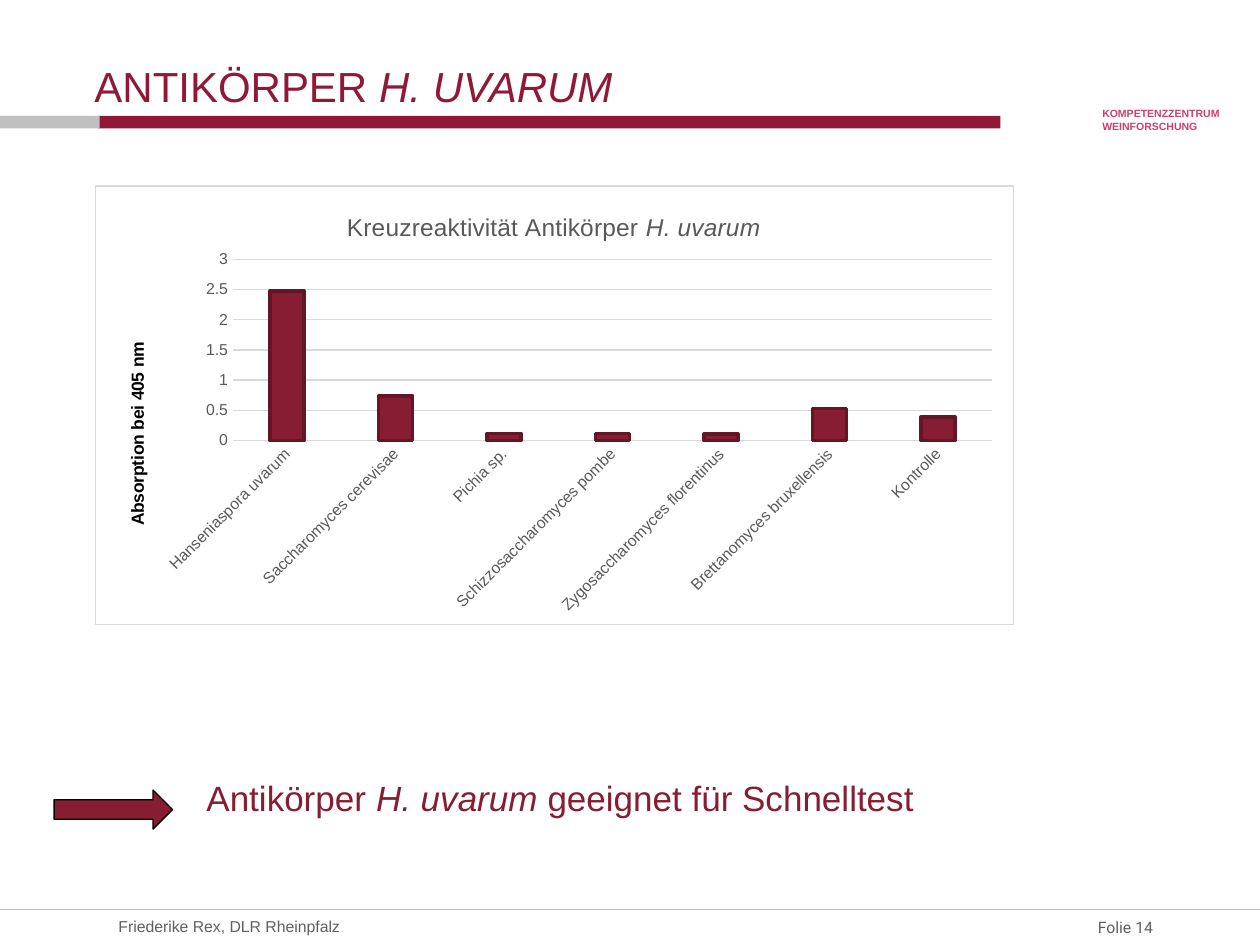
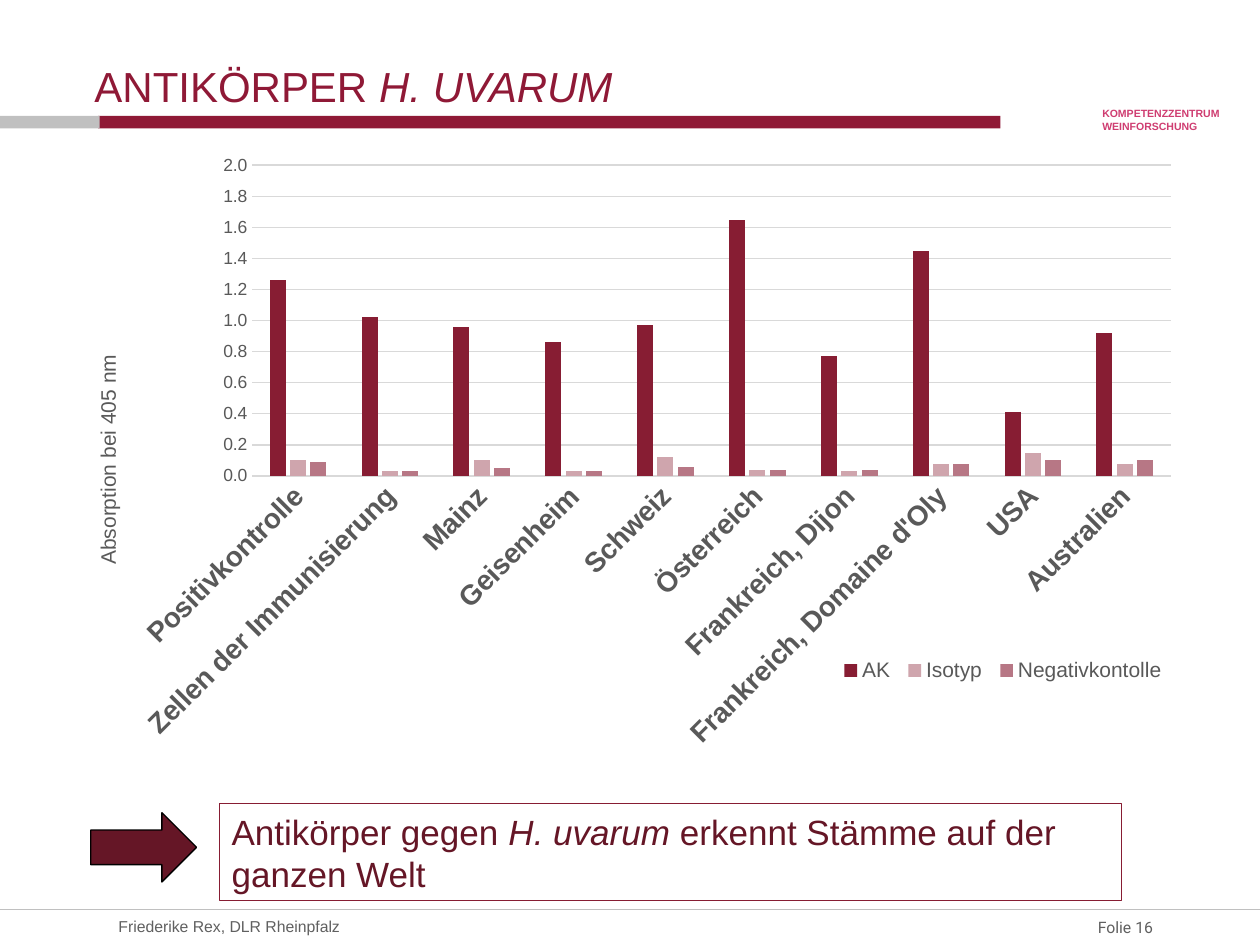
from pptx import Presentation
from pptx.chart.data import CategoryChartData
from pptx.dml.color import RGBColor
from pptx.enum.chart import XL_CHART_TYPE, XL_LEGEND_POSITION, XL_TICK_MARK
from pptx.enum.shapes import MSO_CONNECTOR, MSO_SHAPE
from pptx.enum.text import MSO_ANCHOR, PP_ALIGN
from pptx.oxml import parse_xml
from pptx.oxml.ns import nsdecls, qn
from pptx.util import Inches, Pt

COLUMN = XL_CHART_TYPE.COLUMN_CLUSTERED
BOTTOM = XL_LEGEND_POSITION.BOTTOM
NO_TICK = XL_TICK_MARK.NONE
RECT, ARROW = MSO_SHAPE.RECTANGLE, MSO_SHAPE.RIGHT_ARROW
TOP, MIDDLE, LOW = MSO_ANCHOR.TOP, MSO_ANCHOR.MIDDLE, MSO_ANCHOR.BOTTOM
LEFT, RIGHT = PP_ALIGN.LEFT, PP_ALIGN.RIGHT

BAND = RGBColor(0x8F, 0x19, 0x36)
WINE = RGBColor(0x87, 0x1D, 0x33)
DARK = RGBColor(0x65, 0x16, 0x26)
ROSE = RGBColor(0xCF, 0xA5, 0xAD)
MAUVE = RGBColor(0xB7, 0x77, 0x85)
PINK = RGBColor(0xCF, 0x3D, 0x71)
SILVER = RGBColor(0xC0, 0xC0, 0xC0)
PALE = RGBColor(0xD9, 0xD9, 0xD9)
GREY = RGBColor(0x59, 0x59, 0x59)
FOOT = RGBColor(0x60, 0x60, 0x60)
BLACK = RGBColor(0, 0, 0)
FONT = "Arial"

TITLE = [("ANTIKÖRPER ", False), ("H. UVARUM", True)]
AUTHOR = "Friederike Rex, DLR Rheinpfalz"
CENTRE = "KOMPETENZZENTRUM WEINFORSCHUNG"
AXIS = "Absorption bei 405 nm"

CROSS = {
    "at": (0.75, 1.47, 7.3, 3.49),
    "title": [("Kreuzreaktivität Antikörper ", False), ("H. uvarum", True)],
    "title_at": (0.27, 0.05),
    "cats": ["Hanseniaspora uvarum", "Saccharomyces cerevisae", "Pichia sp.",
             "Schizzosaccharomyces pombe", "Zygosaccharomyces florentinus",
             "Brettanomyces bruxellensis", "Kontrolle"],
    "series": [("Series 1", WINE, [2.48, 0.74, 0.12, 0.12, 0.11, 0.53, 0.39])],
    "top": 3, "step": 0.5, "format": "General",
    "cat_font": (9, GREY, False), "val_font": (9, GREY, False),
    "axis_font": (10, BLACK, True), "axis_at": (0.03, 0.35),
    "plot": (0.15, 0.168, 0.827, 0.413),
    "edge": DARK, "frame": True, "legend": None,
}
STRAINS = {
    "at": (0.5, 1.13, 8.99, 5.34),
    "title": None,
    "cats": ["Positivkontrolle", "Zellen der Immunisierung", "Mainz", "Geisenheim",
             "Schweiz", "Österreich", "Frankreich, Dijon",
             "Frankreich, Domaine d'Oly", "USA", "Australien"],
    "series": [
        ("AK", WINE, [1.26, 1.02, 0.96, 0.86, 0.97, 1.65, 0.77, 1.45, 0.41, 0.92]),
        ("Isotyp", ROSE, [0.1, 0.03, 0.1, 0.03, 0.12, 0.04, 0.03, 0.08, 0.15, 0.08]),
        ("Negativkontolle", MAUVE,
         [0.09, 0.03, 0.05, 0.03, 0.06, 0.04, 0.04, 0.08, 0.1, 0.1]),
    ],
    "top": 2, "step": 0.2, "format": "0.0",
    "cat_font": (16, GREY, True), "val_font": (10, GREY, False),
    "axis_font": (12, GREY, False), "axis_at": (0.025, 0.31),
    "plot": (0.167, 0.034, 0.811, 0.462),
    "edge": None, "frame": False, "legend": (0.68, 0.76, 0.3, 0.05),
}
SLIDES = [
    {"number": 14, "chart": CROSS, "tint": WINE, "box": (1.54, 6.11, 8.23, 0.44),
     "arrow": (0.43, 6.27, 0.94, 0.31), "framed": False,
     "claim": [("Antikörper ", False), ("H. uvarum ", True),
               ("geeignet für Schnelltest", False)]},
    {"number": 16, "chart": STRAINS, "tint": DARK, "box": (1.74, 6.38, 7.16, 0.77),
     "arrow": (0.72, 6.45, 0.84, 0.55), "framed": True,
     "claim": [("Antikörper gegen ", False), ("H. uvarum ", True),
               ("erkennt Stämme auf der ganzen Welt", False)]},
]


def style(font, size, color, bold=False, name=FONT):
    font.name, font.size, font.bold = name, Pt(size), bold
    font.color.rgb = color


def write(para, runs, size, color, bold=False, name=FONT):
    for text, slant in runs:
        run = para.add_run()
        run.text = text
        style(run.font, size, color, bold, name)
        run.font.italic = slant


def label(slide, at, runs, size, color, bold=False, name=FONT,
          anchor=TOP, align=LEFT, inset=True):
    box = slide.shapes.add_textbox(*map(Inches, at))
    frame = box.text_frame
    frame.word_wrap = True
    frame.vertical_anchor = anchor
    if not inset:
        frame.margin_left = frame.margin_right = 0
        frame.margin_top = frame.margin_bottom = 0
    frame.paragraphs[0].alignment = align
    write(frame.paragraphs[0], runs, size, color, bold, name)
    return box


def block(slide, kind, at, fill, line=None):
    shape = slide.shapes.add_shape(kind, *map(Inches, at))
    shape.shadow.inherit = False
    shape.fill.solid()
    shape.fill.fore_color.rgb = fill
    if line is None:
        shape.line.fill.background()
    else:
        shape.line.color.rgb = line
        shape.line.width = Pt(0.75)


def place(node, index, spot, inner=False):
    old = node.find(qn("c:layout"))
    if old is not None:
        node.remove(old)
    target = '<c:layoutTarget val="inner"/>' if inner else ""
    modes = "".join(f'<c:{key}Mode val="edge"/>' for key in "xy")
    sizes = "".join(f'<c:{key} val="{val}"/>' for key, val in zip("xywh", spot))
    node.insert(index, parse_xml(
        f'<c:layout {nsdecls("c")}><c:manualLayout>{target}{modes}{sizes}'
        '</c:manualLayout></c:layout>'))


def border(chart, shown):
    fill = ('<a:solidFill><a:srgbClr val="{}"/></a:solidFill>'.format
            if shown else lambda color: "<a:noFill/>")
    chart.element.find(qn("c:chart")).addnext(parse_xml(
        f'<c:spPr {nsdecls("c", "a")}>{fill("FFFFFF")}'
        f'<a:ln w="9525">{fill(PALE)}</a:ln></c:spPr>'))


def columns(slide, info):
    data = CategoryChartData()
    data.categories = info["cats"]
    for name, color, vals in info["series"]:
        data.add_series(name, vals)
    chart = slide.shapes.add_chart(COLUMN, *map(Inches, info["at"]), data).chart
    style(chart.font, 10, BLACK)
    border(chart, info["frame"])

    plot = chart.plots[0]
    plot.gap_width, plot.overlap = 219, -27
    plot.vary_by_categories = False
    for series, (name, color, vals) in zip(plot.series, info["series"]):
        series.invert_if_negative = False
        series.format.fill.solid()
        series.format.fill.fore_color.rgb = color
        if info["edge"] is not None:
            series.format.line.color.rgb = info["edge"]
            series.format.line.width = Pt(2)

    cat, val = chart.category_axis, chart.value_axis
    for axis, key in ((cat, "cat_font"), (val, "val_font")):
        axis.major_tick_mark = axis.minor_tick_mark = NO_TICK
        style(axis.tick_labels.font, *info[key])
    val.minimum_scale, val.maximum_scale = 0, info["top"]
    val.major_unit = info["step"]
    val.tick_labels.number_format = info["format"]
    val.tick_labels.number_format_is_linked = False
    val.format.line.fill.background()
    for line in (cat.format.line, val.major_gridlines.format.line):
        line.color.rgb = PALE
        line.width = Pt(0.75)
    write(val.axis_title.text_frame.paragraphs[0], [(AXIS, False)], *info["axis_font"])

    area = chart.element.find(".//" + qn("c:plotArea"))
    turn = area.find(f"{qn('c:catAx')}/{qn('c:txPr')}/{qn('a:bodyPr')}")
    turn.set("rot", "-2700000")
    turn.set("vert", "horz")
    name = area.find(f"{qn('c:valAx')}/{qn('c:title')}")
    body = name.find(".//" + qn("a:bodyPr"))
    body.set("rot", "-5400000")
    body.set("vert", "horz")
    place(name, 1, info["axis_at"])
    place(area, 0, info["plot"], True)

    chart.has_title = info["title"] is not None
    if chart.has_title:
        write(chart.chart_title.text_frame.paragraphs[0], info["title"], 14, GREY)
        place(chart.element.find(f"{qn('c:chart')}/{qn('c:title')}"), 1, info["title_at"])
    chart.has_legend = info["legend"] is not None
    if chart.has_legend:
        chart.legend.position = BOTTOM
        chart.legend.include_in_layout = False
        style(chart.legend.font, 12, GREY)
        place(chart.element.find(".//" + qn("c:legend")), 1, info["legend"])


def base(slide, number):
    block(slide, RECT, (0.78, 0.92, 7.16, 0.1), BAND)
    block(slide, RECT, (0, 0.92, 0.79, 0.1), SILVER)
    label(slide, (0.94, 7.22, 6.56, 0.26), [(AUTHOR, False)], 9, FOOT,
          anchor=MIDDLE, inset=False)
    label(slide, (7.94, 7.22, 1.21, 0.28), [(f"Folie {number}", False)], 9, FOOT,
          name="Roboto", anchor=MIDDLE, align=RIGHT, inset=False)
    rule = slide.shapes.add_connector(
        MSO_CONNECTOR.STRAIGHT, 0, Inches(7.22), Inches(10), Inches(7.22))
    rule.line.color.rgb = SILVER
    rule.line.width = Pt(0.75)
    rule.element.spPr.append(parse_xml(f'<a:effectLst {nsdecls("a")}/>'))
    label(slide, (8.65, 0.8, 1.33, 0.3), [(CENTRE, False)], 6, PINK, True)
    label(slide, (0.75, 0.15, 7.44, 0.73), TITLE, 24, BAND, anchor=LOW, inset=False)


def main():
    deck = Presentation()
    deck.slide_width, deck.slide_height = Inches(10), Inches(7.5)
    for info in SLIDES:
        slide = deck.slides.add_slide(deck.slide_layouts[6])
        base(slide, info["number"])
        columns(slide, info["chart"])
        box = label(slide, info["box"], info["claim"], 20, info["tint"])
        if info["framed"]:
            box.line.color.rgb = WINE
            box.line.width = Pt(0.75)
        block(slide, ARROW, info["arrow"], info["tint"], BLACK)
    deck.save("out.pptx")


if __name__ == "__main__":
    main()
